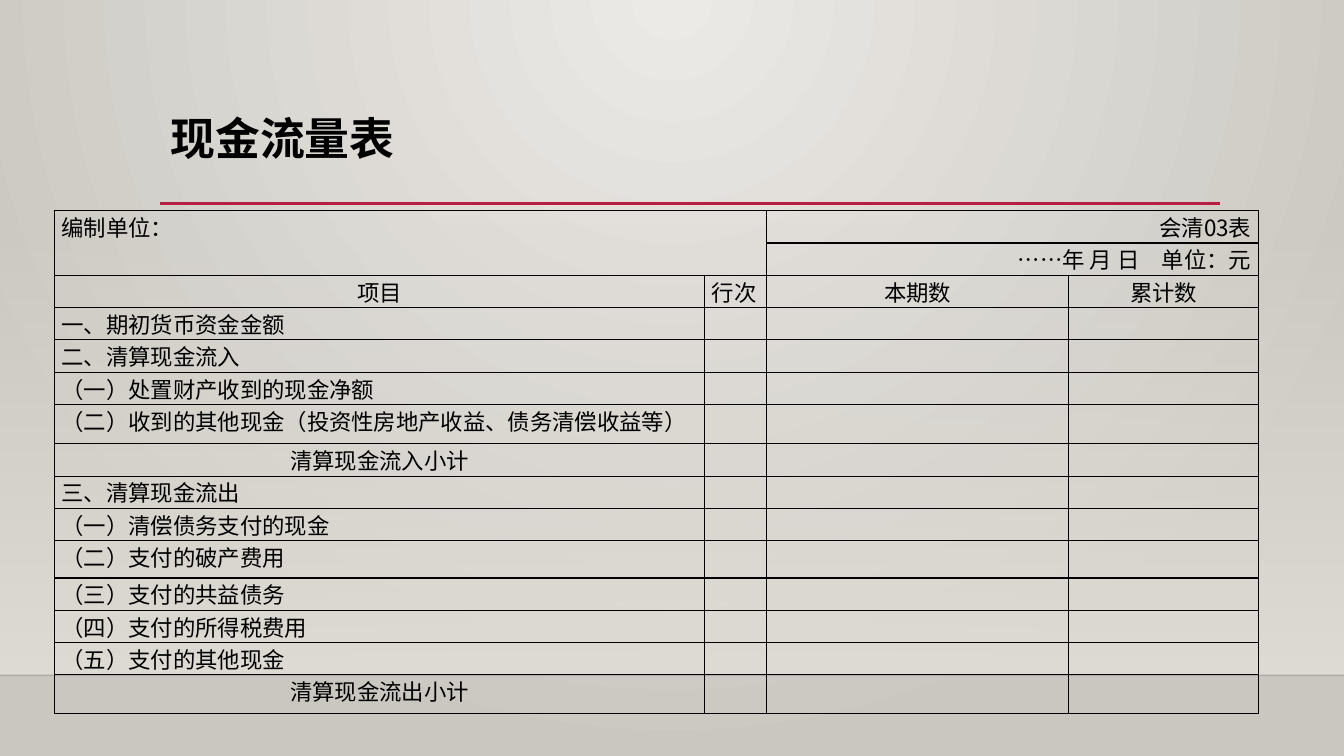
from lxml import etree
from pptx import Presentation
from pptx.dml.color import RGBColor
from pptx.enum.shapes import MSO_CONNECTOR, MSO_SHAPE
from pptx.enum.text import MSO_ANCHOR, PP_ALIGN
from pptx.oxml.ns import qn
from pptx.util import Emu, Pt

STRAIGHT = MSO_CONNECTOR.STRAIGHT
RECTANGLE = MSO_SHAPE.RECTANGLE
BOTTOM = MSO_ANCHOR.BOTTOM
LEFT, RIGHT = PP_ALIGN.LEFT, PP_ALIGN.RIGHT
CENTER, JUSTIFY = PP_ALIGN.CENTER, PP_ALIGN.JUSTIFY

FONT = "Noto Sans CJK SC"
BLACK = "000000"
COLUMN_WIDTHS = [645, 61, 300, 188]
ROW_HEIGHT = 29
TALL_ROWS = {6: 39, 10: 37, 14: 38}

# Cash flow items, one per row below the column heads
ITEMS = [
    ("一、期初货币资金金额", JUSTIFY),
    ("二、清算现金流入", JUSTIFY),
    ("（一）处置财产收到的现金净额", JUSTIFY),
    ("（二）收到的其他现金（投资性房地产收益、债务清偿收益等）", JUSTIFY),
    ("清算现金流入小计", CENTER),
    ("三、清算现金流出", JUSTIFY),
    ("（一）清偿债务支付的现金", JUSTIFY),
    ("（二）支付的破产费用", JUSTIFY),
    ("（三）支付的共益债务", JUSTIFY),
    ("（四）支付的所得税费用", JUSTIFY),
    ("（五）支付的其他现金", LEFT),
    ("清算现金流出小计", CENTER),
]
HEADS = [("项目", CENTER), ("行次", JUSTIFY), ("本期数", CENTER), ("累计数", CENTER)]


def px(length):
    """100 px to the inch."""
    return Emu(length * 9144)


def color(value):
    return RGBColor.from_string(value)


def add_element(parent, tag, **attributes):
    return etree.SubElement(parent, qn(tag), **attributes)


def set_opacity(element, percent):
    add_element(next(element.iter(qn("a:srgbClr"))), "a:alpha", val=str(percent * 1000))


def set_gradient(owner, fill, first, last):
    """Run from one colour to another; return the gradient, still without direction."""
    fill.gradient()
    for stop, position, value in zip(fill.gradient_stops, (0, 1), (first, last)):
        stop.position = position
        stop.color.rgb = color(value)
    gradient = next(owner.iter(qn("a:gradFill")))
    gradient.remove(gradient.find(qn("a:lin")))
    return gradient


def add_span(para, text, size, bold=False):
    span = para.add_run()
    span.text = text
    span.font.size = Pt(size)
    span.font.bold = bold
    span.font.name = FONT
    span.font.color.rgb = color(BLACK)
    add_element(span.font._element, "a:ea", typeface=FONT)


def add_line(page, left, right, y, value, width, opacity=100):
    line = page.shapes.add_connector(STRAIGHT, px(left), px(y), px(right), px(y))
    line.line.color.rgb = color(value)
    line.line.width = Pt(width)
    properties = line._element.spPr
    if opacity < 100:
        set_opacity(properties, opacity)
    add_element(properties, "a:effectLst")


def add_backdrop(page):
    glow = set_gradient(page._element, page.background.fill, "ECEAE7", "CAC7C1")
    circle = add_element(glow, "a:path", path="circle")
    add_element(circle, "a:fillToRect", l="43000", t="0", r="43000", b="100000")

    wall = page.shapes.add_shape(RECTANGLE, 0, px(221), px(1333), px(449))
    wall.shadow.inherit = False
    wall.line.fill.background()
    fade = set_gradient(wall._element, wall.fill, "DFDBD5", "DFDBD5")
    set_opacity(fade, 0)
    add_element(fade, "a:lin", ang="5400000", scaled="0")
    add_line(page, 0, 1333, 670, "000001", 1, opacity=20)


def set_title(page, text):
    title = page.shapes.title
    title.left, title.top, title.width, title.height = px(159), px(60), px(1050), px(115)
    box = title.text_frame
    box.word_wrap = True
    box.vertical_anchor = BOTTOM
    box.margin_bottom = px(11)
    para = box.paragraphs[0]
    para.alignment = LEFT
    para.line_spacing = 0.9
    add_span(para, text, 32, bold=True)


def format_cell(cell):
    cell.margin_left = cell.margin_right = px(7)
    cell.margin_top = cell.margin_bottom = 0
    cell.fill.background()
    properties = cell._tc.get_or_add_tcPr()
    for index, side in enumerate(("a:lnL", "a:lnR", "a:lnT", "a:lnB")):
        border = etree.Element(qn(side), w=str(Pt(1)))
        add_element(add_element(border, "a:solidFill"), "a:srgbClr", val=BLACK)
        properties.insert(index, border)


def fill_cell(cell, text, alignment):
    para = cell.text_frame.paragraphs[0]
    para.alignment = alignment
    add_span(para, text, 16)


def add_cash_flow_table(page):
    row_count = len(ITEMS) + 3
    heights = [TALL_ROWS.get(row, ROW_HEIGHT) for row in range(row_count)]
    frame = page.shapes.add_table(row_count, len(COLUMN_WIDTHS), px(54), px(209),
                                  px(sum(COLUMN_WIDTHS)), px(sum(heights)))
    table = frame.table
    table.first_row = table.horz_banding = False
    for column, width in zip(table.columns, COLUMN_WIDTHS):
        column.width = px(width)
    for row, height in zip(table.rows, heights):
        row.height = px(height)
        for cell in row.cells:
            format_cell(cell)

    # Form details
    table.cell(0, 0).merge(table.cell(1, 1))
    for row in (0, 1):
        table.cell(row, 2).merge(table.cell(row, 3))
    fill_cell(table.cell(0, 0), "编制单位：", JUSTIFY)
    fill_cell(table.cell(0, 2), "会清03表", RIGHT)
    fill_cell(table.cell(1, 2), "……年 月 日　单位：元", RIGHT)

    # Column heads and items
    for column, (text, alignment) in enumerate(HEADS):
        fill_cell(table.cell(2, column), text, alignment)
    for row, (text, alignment) in enumerate(ITEMS, start=3):
        fill_cell(table.cell(row, 0), text, alignment)

    # Empty cells keep the text size, so that rows stay low
    for cell in table.iter_cells():
        para = cell.text_frame.paragraphs[0]
        if not para.runs:
            add_element(para._p, "a:endParaRPr", sz="1600")


def main():
    deck = Presentation()
    deck.slide_width, deck.slide_height = px(1333), px(750)
    page = deck.slides.add_slide(deck.slide_layouts[5])
    add_backdrop(page)
    add_line(page, 159, 1210, 202, "B71E42", 2.5)
    set_title(page, "现金流量表")
    add_cash_flow_table(page)
    deck.save("out.pptx")


if __name__ == "__main__":
    main()
